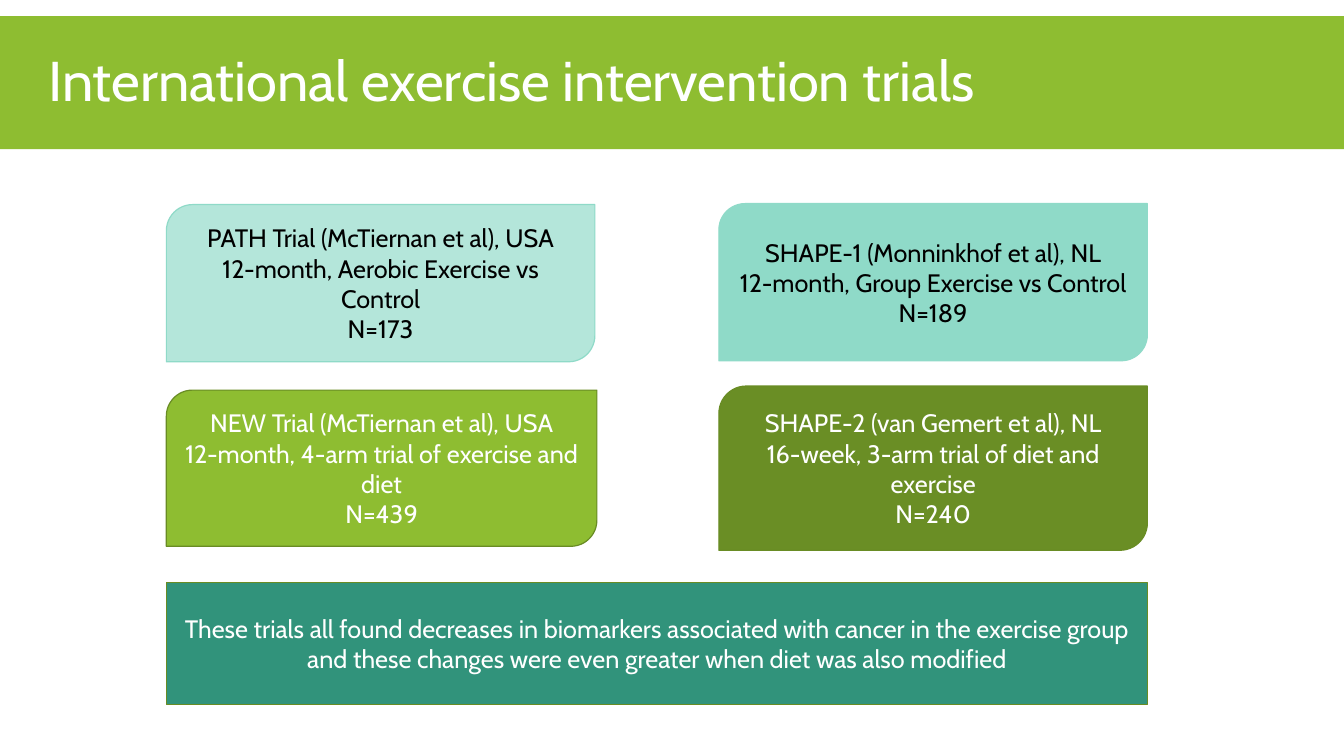
from dataclasses import dataclass

from pptx import Presentation
from pptx import util as u
from pptx.dml import color
from pptx.enum import shapes, text

FONT = "Cabin"
COLORS = {
    "white": "FFFFFF",
    "black": "000000",
    "lime": "8EBD31",
    "olive": "6A8E25",
    "olive_line": "698C24",
    "mint": "B4E6DA",
    "aqua": "8FDAC8",
    "teal": "31937B",
}
RECT = shapes.MSO_SHAPE.RECTANGLE
CARD = shapes.MSO_SHAPE.ROUND_2_DIAG_RECTANGLE
LEFT_COL, RIGHT_COL = 1.65, 7.13


@dataclass
class Box:
    left: float
    top: float
    width: float
    height: float
    fill: str
    line: str | None = None
    lines: tuple[str, ...] = ()
    ink: str = "white"
    kind: shapes.MSO_SHAPE = CARD


BAND = Box(0, 0.16, 13.33, 1.32, "lime", kind=RECT)

BOXES = [
    # Trial cards
    Box(LEFT_COL, 2.03, 4.25, 1.56, "mint", "aqua",
        ("PATH Trial (McTiernan et al), USA",
         "12-month, Aerobic Exercise vs Control", "N=173"), "black"),
    Box(LEFT_COL, 3.87, 4.27, 1.55, "lime", "olive_line",
        ("NEW Trial (McTiernan et al), USA",
         "12-month, 4-arm trial of exercise and diet", "N=439")),
    Box(RIGHT_COL, 3.83, 4.25, 1.63, "olive", "olive_line",
        ("SHAPE-2 (van Gemert et al), NL",
         "16-week, 3-arm trial of diet and exercise", "N=240")),
    Box(RIGHT_COL, 2.02, 4.25, 1.56, "aqua", "aqua",
        ("SHAPE-1 (Monninkhof et al), NL",
         "12-month, Group Exercise vs Control", "N=189"), "black"),
    # Conclusion
    Box(LEFT_COL, 5.78, 9.73, 1.21, "teal", "olive_line",
        ("These trials all found decreases in biomarkers associated with "
         "cancer in the exercise group and these changes were even greater "
         "when diet was also modified",), kind=RECT),
]


def rgb(name: str) -> color.RGBColor:
    return color.RGBColor.from_string(COLORS[name])


def format_text(tf, size: float, ink: str, align) -> None:
    for p in tf.paragraphs:
        p.alignment = align
        for r in p.runs:
            r.font.name = FONT
            r.font.size = u.Pt(size)
            r.font.color.rgb = rgb(ink)


def add_box(s, box: Box):
    sp = s.shapes.add_shape(box.kind, u.Inches(box.left), u.Inches(box.top),
                            u.Inches(box.width), u.Inches(box.height))
    sp.shadow.inherit = False
    sp.fill.solid()
    sp.fill.fore_color.rgb = rgb(box.fill)
    if box.line:
        sp.line.color.rgb = rgb(box.line)
        sp.line.width = u.Pt(0.85)
    else:
        sp.line.fill.background()
    if box.lines:
        tf = sp.text_frame
        tf.text = "\n".join(box.lines)
        tf.word_wrap = True
        tf.vertical_anchor = text.MSO_ANCHOR.MIDDLE
        format_text(tf, 18, box.ink, text.PP_ALIGN.CENTER)
    return sp


def set_title(s, wording: str):
    title = s.shapes.title
    title.left, title.top = u.Inches(0.38), u.Inches(0.4)
    title.width, title.height = u.Inches(9.92), u.Inches(0.77)
    tf = title.text_frame
    tf.text = wording
    tf.word_wrap = True
    tf.auto_size = text.MSO_AUTO_SIZE.SHAPE_TO_FIT_TEXT
    tf.vertical_anchor = text.MSO_ANCHOR.TOP
    format_text(tf, 40, "white", text.PP_ALIGN.LEFT)
    return title


def main() -> None:
    prs = Presentation()
    prs.slide_width, prs.slide_height = u.Inches(13.33), u.Inches(7.5)
    s = prs.slides.add_slide(prs.slide_layouts[5])

    # Title over its band
    title = set_title(s, "International exercise intervention trials")
    band = add_box(s, BAND)
    title.element.addprevious(band.element)

    for box in BOXES:
        add_box(s, box)
    prs.save("out.pptx")


if __name__ == "__main__":
    main()
